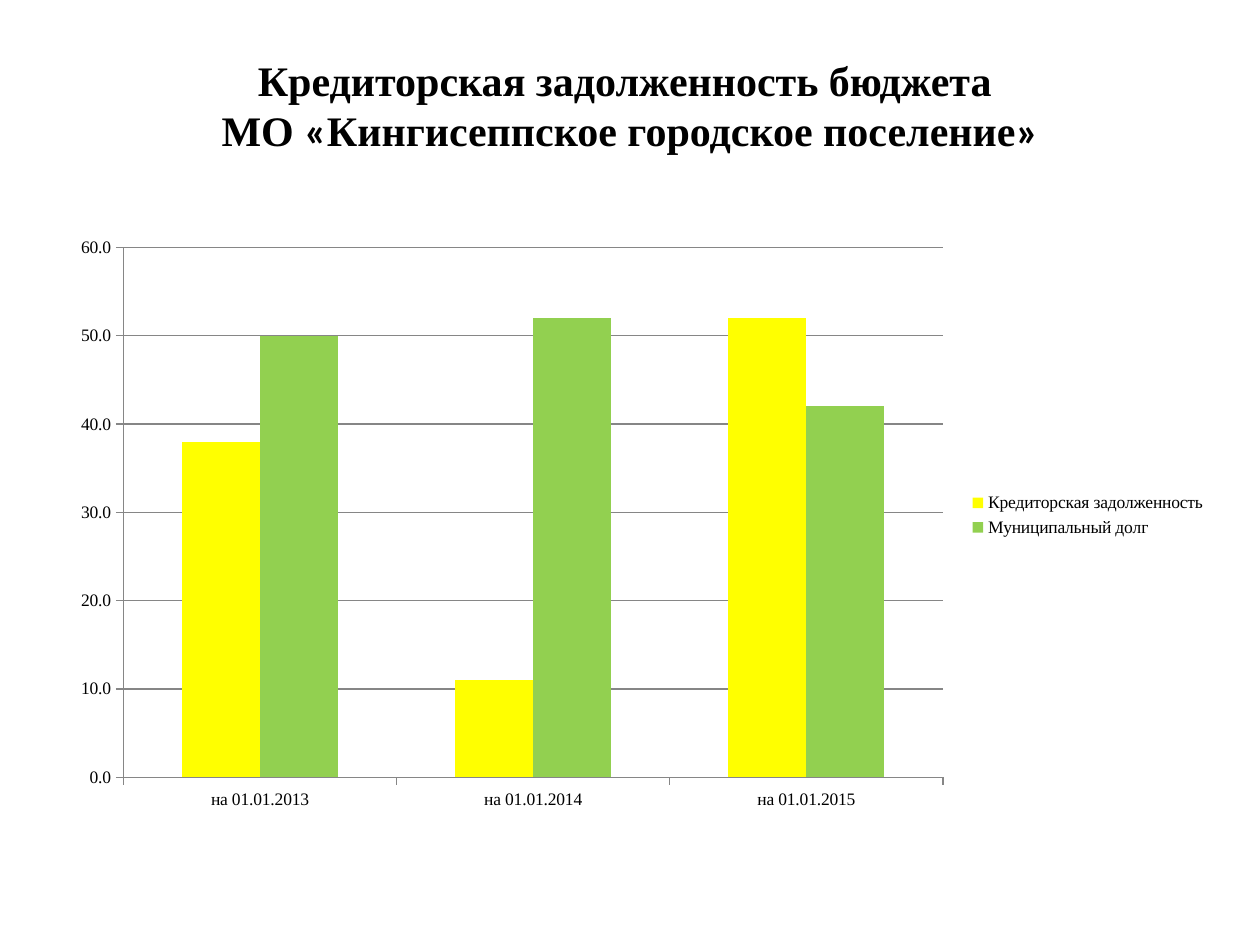
"""Build a slide with a column chart of payables and municipal debt."""
from typing import NamedTuple

from lxml import etree
from pptx import Presentation
from pptx.chart import data as cd
from pptx.dml.color import RGBColor
from pptx.enum import chart as ce, text as te
from pptx.oxml import ns
from pptx.util import Cm, Pt

HUES = {"text": "000000", "line": "868686", "debt": "FFFF00", "loan": "92D050"}
SERIF, SANS = "Times New Roman", "Calibri"


class Row(NamedTuple):
    name: str
    vals: tuple[int, ...]
    hue: str


class Bit(NamedTuple):
    text: str
    face: str = SERIF


DATES = [f"на 01.01.{year}" for year in (2013, 2014, 2015)]
ROWS = [
    Row("Кредиторская задолженность", (38, 11, 52), "debt"),
    Row("Муниципальный долг", (50, 52, 42), "loan"),
]
HEAD = [
    [Bit("Кредиторская задолженность бюджета ")],
    [Bit("МО "), Bit("«", SANS), Bit("Кингисеппское городское поселение"), Bit("»", SANS)],
]
PLOT = {"x": 0.051, "y": 0.047, "w": 0.71, "h": 0.897}


def tint(key: str) -> RGBColor:
    return RGBColor.from_string(HUES[key])


def draw_head(slide) -> None:
    head = slide.shapes.title
    head.left, head.top, head.width, head.height = Cm(0), Cm(0.95), Cm(25.4), Cm(2.31)
    frame = head.text_frame
    frame.word_wrap = True
    frame.auto_size = te.MSO_AUTO_SIZE.SHAPE_TO_FIT_TEXT
    frame.vertical_anchor = te.MSO_ANCHOR.MIDDLE
    for i, bits in enumerate(HEAD):
        para = frame.add_paragraph() if i else frame.paragraphs[0]
        para.alignment = te.PP_ALIGN.CENTER
        para.font.size, para.font.bold = Pt(24), True
        para.font.color.rgb = tint("text")
        for bit in bits:
            run = para.add_run()
            run.text, run.font.name = bit.text, bit.face


def place_plot(chart) -> None:
    area = chart._chartSpace.chart.plotArea
    for old in area.findall(ns.qn("c:layout")):
        area.remove(old)
    layout = etree.Element(ns.qn("c:layout"))
    manual = etree.SubElement(layout, ns.qn("c:manualLayout"))
    rules = {"layoutTarget": "inner", "xMode": "edge", "yMode": "edge", **PLOT}
    for tag, val in rules.items():
        etree.SubElement(manual, ns.qn(f"c:{tag}")).set("val", str(val))
    area.insert(0, layout)


def draw_chart(slide) -> None:
    data = cd.CategoryChartData(number_format="0.0")
    data.categories = DATES
    for row in ROWS:
        data.add_series(row.name, row.vals)
    chart = slide.shapes.add_chart(
        ce.XL_CHART_TYPE.COLUMN_CLUSTERED,
        Cm(1.3), Cm(4.43), Cm(23.27), Cm(11.91), data).chart
    chart.has_title = False
    chart.font.name, chart.font.size = SERIF, Pt(10)
    chart.font.color.rgb = tint("text")
    chart.has_legend = True
    chart.legend.position = ce.XL_LEGEND_POSITION.RIGHT
    chart.legend.include_in_layout = False
    plot = chart.plots[0]
    plot.gap_width, plot.overlap, plot.vary_by_categories = 150, 0, False
    for bars, row in zip(plot.series, ROWS):
        bars.format.fill.solid()
        bars.format.fill.fore_color.rgb = tint(row.hue)
    axis = chart.value_axis
    axis.minimum_scale, axis.maximum_scale, axis.major_unit = 0, 60, 10
    axis.has_major_gridlines = True
    axis.tick_labels.number_format = "0.0"
    axis.tick_labels.number_format_is_linked = False
    for part in (axis, chart.category_axis):
        part.major_tick_mark = ce.XL_TICK_MARK.OUTSIDE
    for part in (axis, chart.category_axis, axis.major_gridlines):
        part.format.line.color.rgb = tint("line")
        part.format.line.width = Pt(0.75)
    place_plot(chart)


def main() -> None:
    deck = Presentation()
    deck.slide_width, deck.slide_height = Cm(25.4), Cm(19.05)
    slide = deck.slides.add_slide(deck.slide_layouts[5])
    draw_head(slide)
    draw_chart(slide)
    deck.save("out.pptx")


if __name__ == "__main__":
    main()
